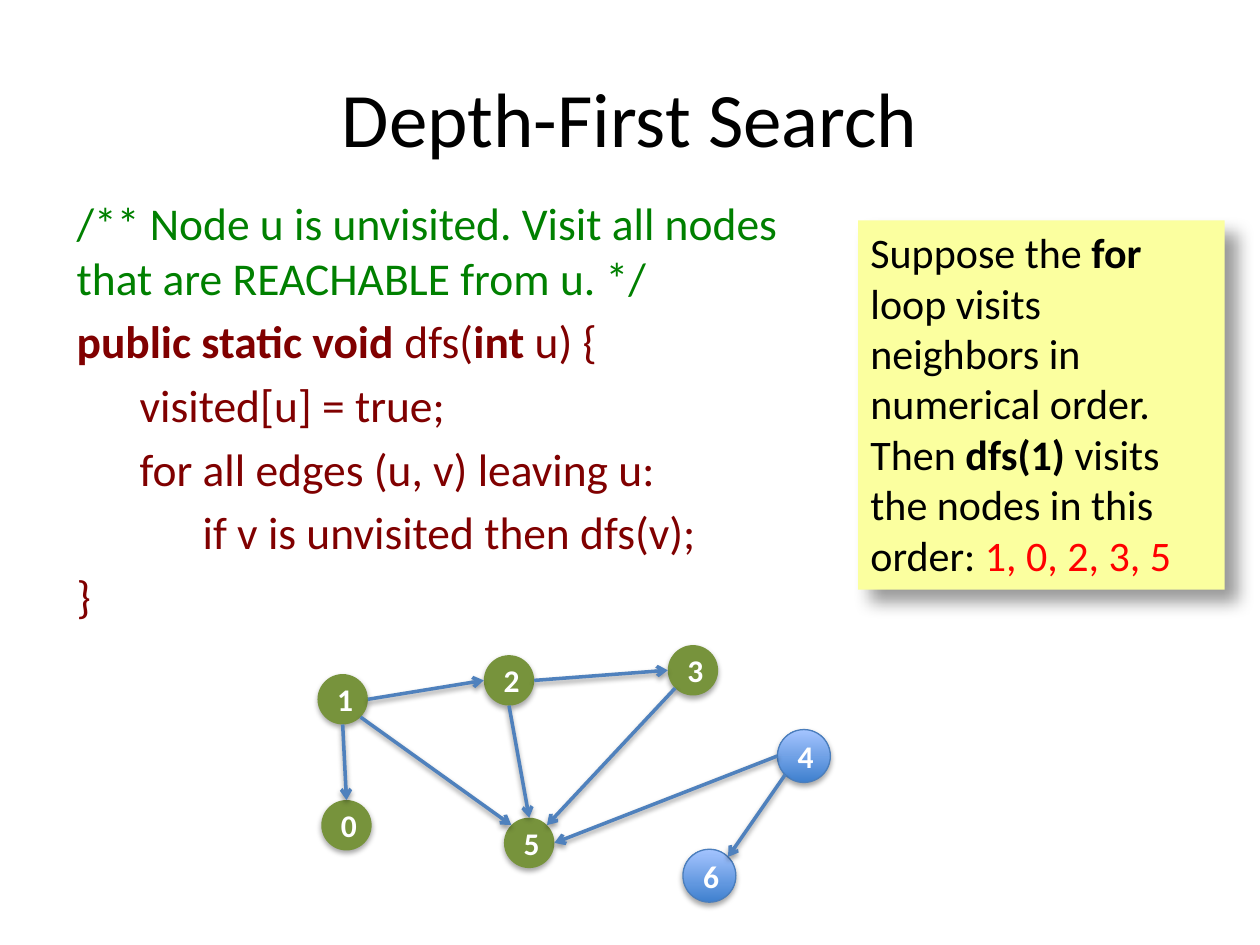
from math import cos, radians, sin

from lxml.etree import SubElement
from pptx import Presentation
from pptx.dml.color import RGBColor
from pptx.enum.shapes import MSO_CONNECTOR, MSO_SHAPE
from pptx.enum.text import MSO_ANCHOR, MSO_AUTO_SIZE, PP_ALIGN
from pptx.oxml.ns import qn
from pptx.util import Inches, Pt

BLACK = RGBColor(0x00, 0x00, 0x00)
WHITE = RGBColor(0xFF, 0xFF, 0xFF)
GREEN = RGBColor(0x00, 0x80, 0x00)
MAROON = RGBColor(0x80, 0x00, 0x00)
RED = RGBColor(0xFF, 0x00, 0x00)
YELLOW = RGBColor(0xFB, 0xFF, 0x9F)
OLIVE = RGBColor(0x77, 0x93, 0x3C)
DEEP_BLUE = RGBColor(0x3F, 0x80, 0xCE)
LIGHT_BLUE = RGBColor(0xA4, 0xC4, 0xFF)
OUTLINE_BLUE = RGBColor(0x4B, 0x7E, 0xBC)
EDGE_BLUE = RGBColor(0x4F, 0x81, 0xBD)

RIGHT, BOTTOM_RIGHT, BOTTOM, BOTTOM_LEFT = 0, 45, 90, 135
LEFT, TOP_LEFT, TOP, TOP_RIGHT = 180, 225, 270, 315

CODE_LINES = [
    (0, GREEN, [("/** Node u is unvisited. Visit all nodes that are REACHABLE from u. */", False)]),
    (0, MAROON, [("public static void ", True), ("dfs(", False), ("int", True), (" u) {", False)]),
    (1, MAROON, [("visited[u] = true;", False)]),
    (1, MAROON, [("for all edges (u, v) leaving u:", False)]),
    (2, MAROON, [("if v is unvisited then dfs(v);", False)]),
    (0, MAROON, [("}", False)]),
]
NOTE_RUNS = [
    ("Suppose the ", False, BLACK),
    ("for", True, BLACK),
    (" loop visits neighbors in numerical order. Then ", False, BLACK),
    ("dfs(1)", True, BLACK),
    (" visits the nodes in this order: ", False, BLACK),
    ("1, 0, 2, 3, 5", False, RED),
]
NODES = [
    ("1", 2.52, 5.35, 0.4, True),
    ("0", 2.55, 6.35, 0.4, True),
    ("2", 3.84, 5.2, 0.4, True),
    ("5", 4, 6.49, 0.4, True),
    ("3", 5.3, 5.12, 0.4, True),
    ("4", 6.17, 5.79, 0.42, False),
    ("6", 5.42, 6.74, 0.42, False),
]
EDGES = [
    ("1", BOTTOM, "0", TOP),
    ("1", BOTTOM_RIGHT, "5", TOP_LEFT),
    ("1", RIGHT, "2", LEFT),
    ("2", BOTTOM, "5", TOP),
    ("2", RIGHT, "3", LEFT),
    ("3", BOTTOM_LEFT, "5", TOP_RIGHT),
    ("4", LEFT, "5", RIGHT),
    ("4", BOTTOM_LEFT, "6", TOP_RIGHT),
]


class SlideBuilder:
    """Holds the style and the slide, and draws each kind of element."""

    font_name = "Calibri"

    def __init__(self, slide):
        self.slide = slide

    def style_font(self, font, size, color=None, bold=None):
        font.name = self.font_name
        font.size = Pt(size)
        if color is not None:
            font.color.rgb = color
        if bold is not None:
            font.bold = bold

    def add_shadow(self, shape, opacity, blur, distance, angle):
        effects = SubElement(shape._element.spPr, qn("a:effectLst"))
        shadow = SubElement(
            effects, qn("a:outerShdw"), blurRad=str(Pt(blur)), dist=str(Pt(distance)),
            dir=str(angle * 60000), algn="tl", rotWithShape="0")
        color = SubElement(shadow, qn("a:srgbClr"), val=str(BLACK))
        SubElement(color, qn("a:alpha"), val=str(opacity * 1000))

    def add_title(self, text):
        title = self.slide.shapes.title
        title.left, title.top = Inches(0.5), Inches(0.3)
        title.width, title.height = Inches(9), Inches(1.25)
        title.text_frame.text = text
        title.text_frame.vertical_anchor = MSO_ANCHOR.MIDDLE
        paragraph = title.text_frame.paragraphs[0]
        paragraph.alignment = PP_ALIGN.CENTER
        self.style_font(paragraph.font, 44, BLACK)

    def add_code(self, lines, left, top, width, height):
        box = self.slide.shapes.add_textbox(Inches(left), Inches(top), Inches(width), Inches(height))
        frame = box.text_frame
        frame.word_wrap = True
        for index, (level, color, runs) in enumerate(lines):
            paragraph = frame.add_paragraph() if index else frame.paragraphs[0]
            paragraph.space_before = Pt(5.2)
            paragraph._p.get_or_add_pPr().set("marL", str(Inches(0.5 * level)))
            self.style_font(paragraph.font, 26, color)
            for text, bold in runs:
                run = paragraph.add_run()
                run.text = text
                run.font.bold = bold

    def add_note(self, runs, left, top, width, height):
        note = self.slide.shapes.add_shape(
            MSO_SHAPE.RECTANGLE, Inches(left), Inches(top), Inches(width), Inches(height))
        note.fill.solid()
        note.fill.fore_color.rgb = YELLOW
        note.line.fill.background()
        self.add_shadow(note, 40, 10, 10, 45)
        frame = note.text_frame
        frame.word_wrap = True
        frame.auto_size = MSO_AUTO_SIZE.SHAPE_TO_FIT_TEXT
        frame.vertical_anchor = MSO_ANCHOR.TOP
        paragraph = frame.paragraphs[0]
        paragraph.alignment = PP_ALIGN.LEFT
        self.style_font(paragraph.font, 24)
        for text, bold, color in runs:
            run = paragraph.add_run()
            run.text = text
            run.font.bold = bold
            run.font.color.rgb = color

    def add_node(self, label, left, top, size, visited):
        node = self.slide.shapes.add_shape(
            MSO_SHAPE.OVAL, Inches(left), Inches(top), Inches(size), Inches(size))
        if visited:
            node.fill.solid()
            node.fill.fore_color.rgb = OLIVE
            node.line.fill.background()
        else:
            node.fill.gradient()
            node.fill.gradient_angle = 90
            for stop, position, color in zip(
                    node.fill.gradient_stops, (0, 1), (DEEP_BLUE, LIGHT_BLUE)):
                stop.position = position
                stop.color.rgb = color
            node.line.color.rgb = OUTLINE_BLUE
            node.line.width = Pt(0.75)
        self.add_shadow(node, 35, 3.1, 1.8, 90)
        frame = node.text_frame
        frame.text = label
        frame.vertical_anchor = MSO_ANCHOR.MIDDLE
        paragraph = frame.paragraphs[0]
        paragraph.alignment = PP_ALIGN.CENTER
        self.style_font(paragraph.font, 18, WHITE, True)
        return node

    def rim_point(self, node, angle):
        radius = node.width / 2
        return (round(node.left + radius * (1 + cos(radians(angle)))),
                round(node.top + radius * (1 + sin(radians(angle)))))

    def add_edge(self, source, source_angle, target, target_angle):
        edge = self.slide.shapes.add_connector(
            MSO_CONNECTOR.STRAIGHT,
            *self.rim_point(source, source_angle), *self.rim_point(target, target_angle))
        edge.line.color.rgb = EDGE_BLUE
        edge.line.width = Pt(2)
        SubElement(edge.line._get_or_add_ln(), qn("a:tailEnd"), type="arrow")
        self.add_shadow(edge, 38, 3.1, 1.6, 90)


def main():
    presentation = Presentation()
    presentation.slide_width, presentation.slide_height = Inches(10), Inches(7.5)
    builder = SlideBuilder(presentation.slides.add_slide(presentation.slide_layouts[5]))
    builder.add_title("Depth-First Search")
    builder.add_code(CODE_LINES, 0.51, 1.5, 6.08, 4.19)
    builder.add_note(NOTE_RUNS, 6.81, 1.75, 2.91, 2.93)
    nodes = {node[0]: builder.add_node(*node) for node in NODES}
    for source, source_angle, target, target_angle in EDGES:
        builder.add_edge(nodes[source], source_angle, nodes[target], target_angle)
    presentation.save("out.pptx")


if __name__ == "__main__":
    main()
